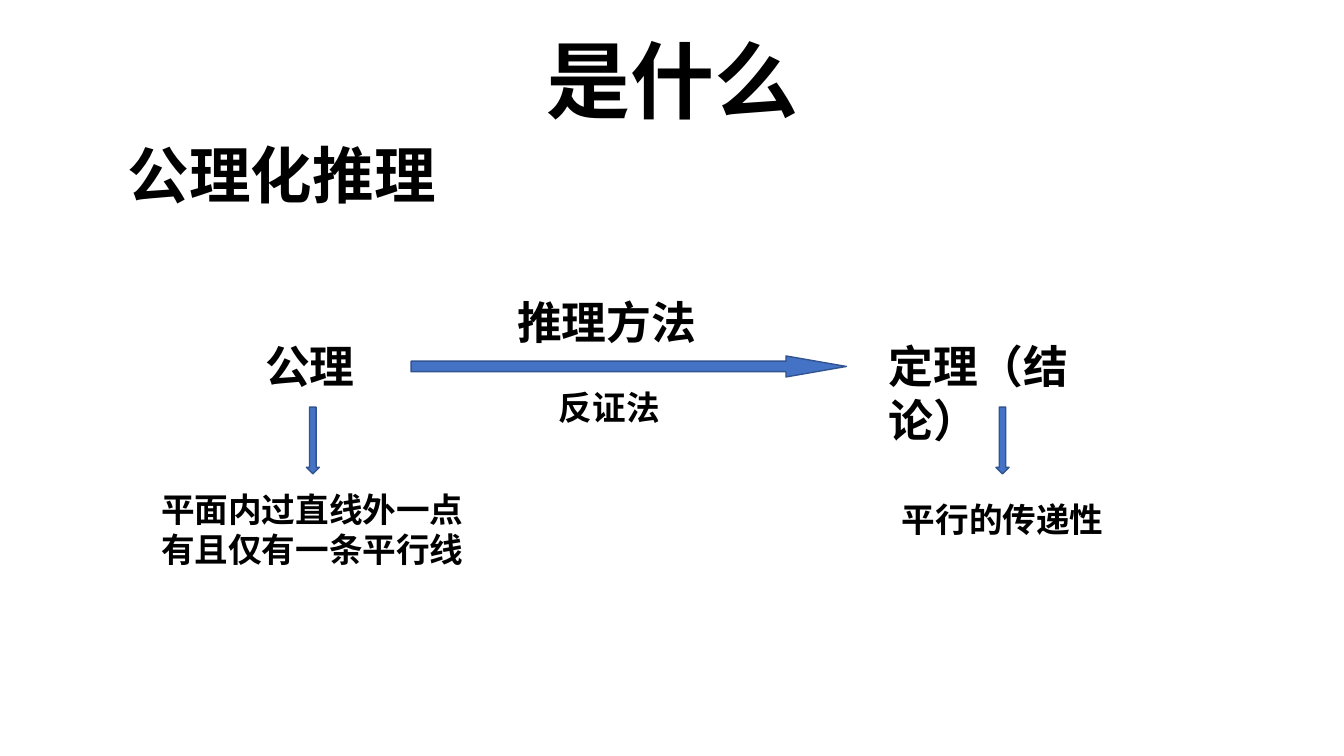
from lxml.etree import SubElement
from pptx import Presentation
from pptx.dml.color import RGBColor
from pptx.enum.shapes import MSO_SHAPE
from pptx.enum.text import MSO_ANCHOR, MSO_AUTO_SIZE, PP_ALIGN
from pptx.oxml.ns import qn
from pptx.util import Cm, Pt

BLACK = RGBColor(0x00, 0x00, 0x00)
BLUE = RGBColor(0x44, 0x72, 0xC4)
DARK_BLUE = RGBColor(0x32, 0x54, 0x91)
FONT = "Noto Sans CJK SC"

TITLE = ("是什么", (2.33, 0.3, 29.21, 3.68))
HEADING = ("公理化推理", (2.97, 3.53, 12.5, 2.26))
TERMS = [
    ("公理", (6.43, 8.41, 3.45, 1.63), PP_ALIGN.LEFT),
    ("推理方法", (12.78, 7.29, 5.21, 1.63), PP_ALIGN.LEFT),
    ("定理（结论）", (22.15, 8.41, 6.81, 1.63), PP_ALIGN.LEFT),
]
EXAMPLES = [
    ("平面内过直线外一点有且仅有一条平行线", (3.81, 12.19, 8.23, 2.31), PP_ALIGN.LEFT),
    ("反证法", (10.44, 9.63, 9.83, 1.27), PP_ALIGN.CENTER),
    ("平行的传递性", (22.48, 12.45, 6.15, 1.27), PP_ALIGN.LEFT),
]
REASONING_ARROW = (10.36, 8.97, 10.97, 0.53)
EXAMPLE_ARROW_LEFTS = [7.72, 25.1]
EXAMPLE_ARROW_TOP, EXAMPLE_ARROW_WIDTH, EXAMPLE_ARROW_HEIGHT = 10.26, 0.33, 1.68


def lengths(box):
    return [Cm(value) for value in box]


def write_text(shape, text, size, alignment, line_spacing=1.0):
    text_frame = shape.text_frame
    text_frame.text = text
    text_frame.word_wrap = True
    paragraph = text_frame.paragraphs[0]
    paragraph.alignment = alignment
    paragraph.line_spacing = line_spacing
    font = paragraph.runs[0].font
    font.size = Pt(size)
    font.bold = True
    font.name = FONT
    font.color.rgb = BLACK
    SubElement(font._element, qn("a:ea")).set("typeface", FONT)


def add_text(slide, text, box, size, alignment=PP_ALIGN.LEFT, line_spacing=1.0):
    shape = slide.shapes.add_textbox(*lengths(box))
    write_text(shape, text, size, alignment, line_spacing)
    return shape


def add_arrow(slide, kind, box):
    arrow = slide.shapes.add_shape(kind, *lengths(box))
    arrow.shadow.inherit = False
    arrow.fill.solid()
    arrow.fill.fore_color.rgb = BLUE
    arrow.line.color.rgb = DARK_BLUE
    arrow.line.width = Pt(1)
    return arrow


def main():
    presentation = Presentation()
    presentation.slide_width = Cm(33.87)
    presentation.slide_height = Cm(19.05)
    slide = presentation.slides.add_slide(presentation.slide_layouts[5])

    title_text, title_box = TITLE
    title = slide.shapes.title
    title.left, title.top, title.width, title.height = lengths(title_box)
    write_text(title, title_text, 60, PP_ALIGN.CENTER, 0.9)
    title.text_frame.vertical_anchor = MSO_ANCHOR.MIDDLE
    title.text_frame.auto_size = MSO_AUTO_SIZE.NONE

    add_text(slide, *HEADING, 44, line_spacing=0.9)

    for labels, size in ((TERMS, 32), (EXAMPLES, 24)):
        for text, box, alignment in labels:
            label = add_text(slide, text, box, size, alignment)
            label.text_frame.auto_size = MSO_AUTO_SIZE.SHAPE_TO_FIT_TEXT

    reasoning_arrow = add_arrow(slide, MSO_SHAPE.RIGHT_ARROW, REASONING_ARROW)
    reasoning_arrow.adjustments[1] = 2.87
    for left in EXAMPLE_ARROW_LEFTS:
        box = (left, EXAMPLE_ARROW_TOP, EXAMPLE_ARROW_WIDTH, EXAMPLE_ARROW_HEIGHT)
        add_arrow(slide, MSO_SHAPE.DOWN_ARROW, box)

    presentation.save("out.pptx")


if __name__ == "__main__":
    main()
